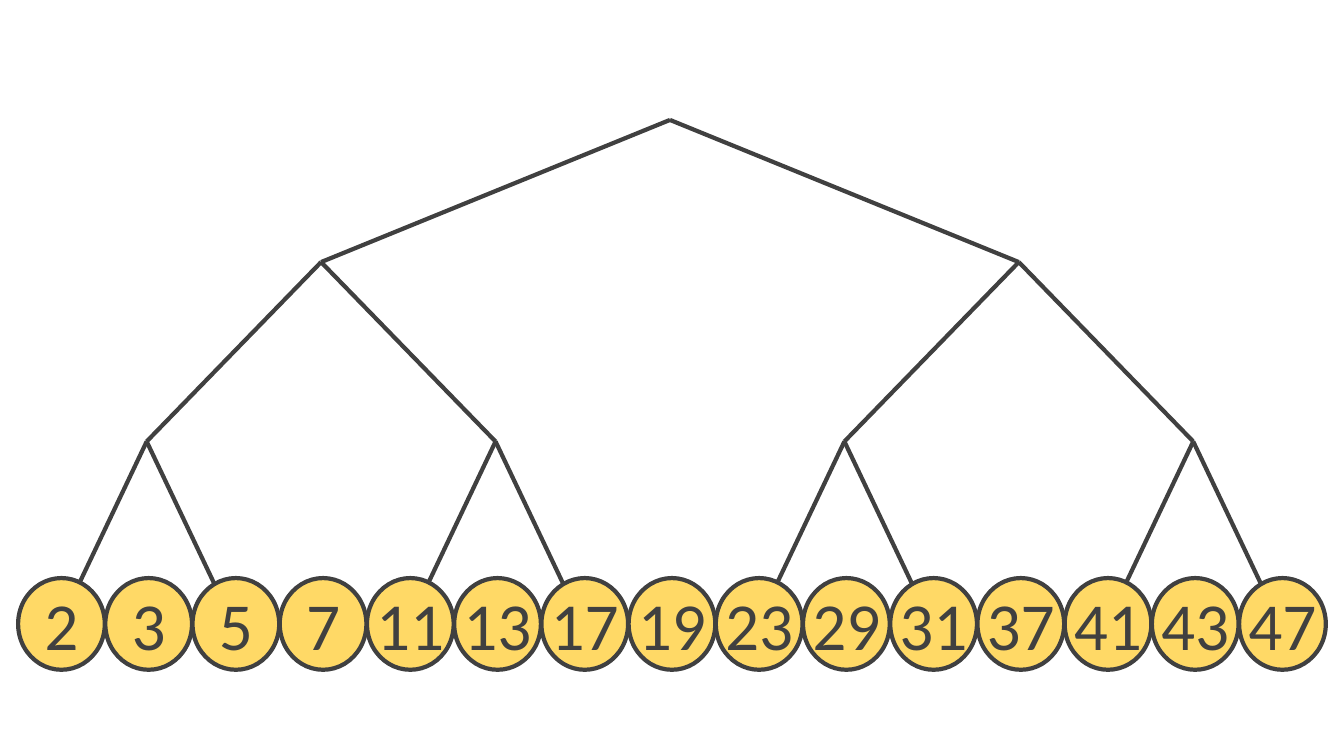
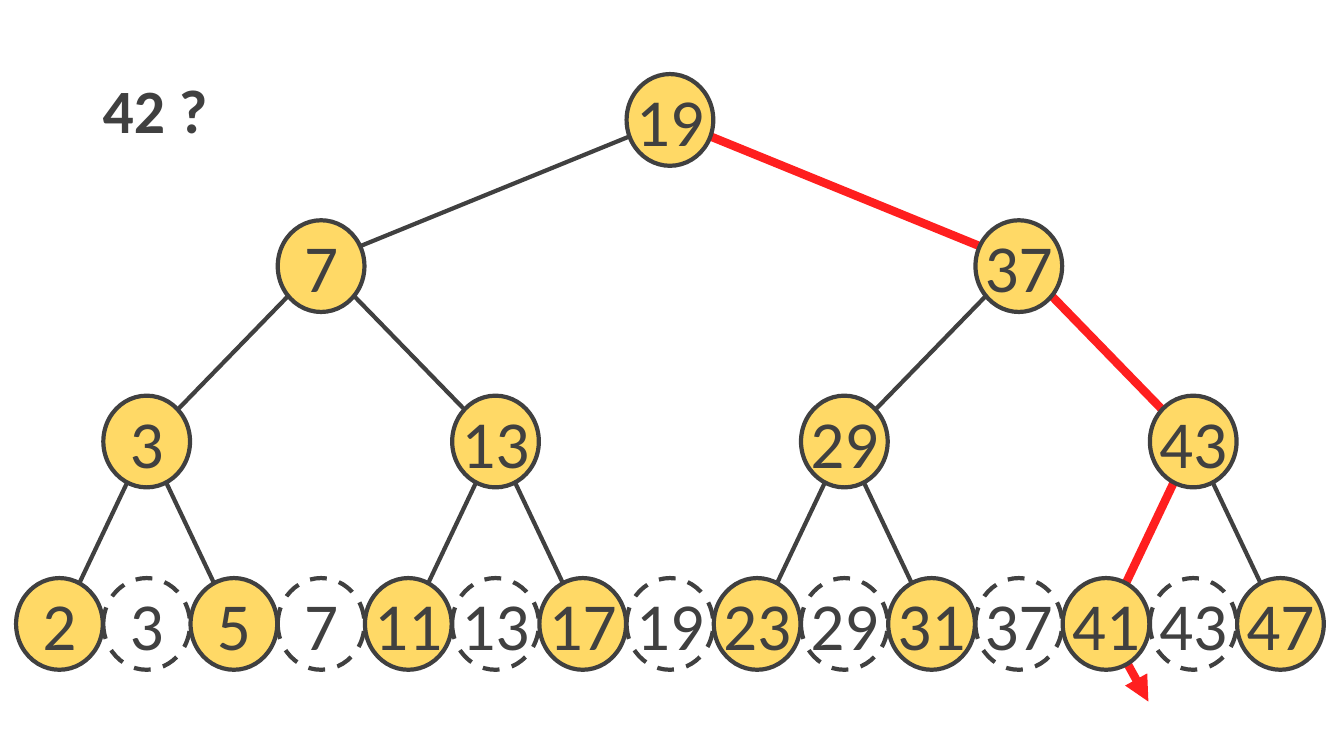
import pptx
import pptx.util
import pptx.dml.color
import pptx.enum.dml
import pptx.enum.shapes
import pptx.enum.text
import lxml.etree

Inches = pptx.util.Inches
Pt = pptx.util.Pt
RGB = pptx.dml.color.RGBColor.from_string
ALIGN = pptx.enum.text.PP_ALIGN
ANCHOR = pptx.enum.text.MSO_ANCHOR

PRIMES = [2, 3, 5, 7, 11, 13, 17, 19, 23, 29, 31, 37, 41, 43, 47]
QUESTION = "42 ?"
SEARCH_PATH = [19, 37, 43, 41]
SEARCH_EXIT = (11.39, 6.96)

THEME = {
    "font": "Calibri", "ink": "404040", "node": "FFD966", "path": "FF1F1F",
    "node_size": 48, "title_size": 44, "line": 3, "path_line": 6,
}
NODE_W, NODE_H = 0.86, 0.91
FIRST_X, STEP_X = 0.59, 0.865
ARRAY_SHIFT = 0.02
NODE_Y = [6.19, 4.38, 2.64, 1.19]
JOINT_Y = [6.2, 4.38, 2.6, 1.19]


def level(i):
    n = i + 1
    return (n & -n).bit_length() - 1


def center_x(i):
    return FIRST_X + STEP_X * i


def joint(i):
    return center_x(i), JOINT_Y[level(i)]


def apply(obj, formats):
    for name, value in formats.items():
        setattr(obj, name, value)


def add_text(tf, text, size, frame, bold=False, align=ALIGN.LEFT, spacing=1.0):
    apply(tf, frame)
    p = tf.paragraphs[0]
    apply(p, {"alignment": align, "line_spacing": spacing})
    r = p.add_run()
    r.text = text
    apply(r.font, {"name": THEME["font"], "size": Pt(size), "bold": bold})
    r.font.color.rgb = RGB(THEME["ink"])


def add_line(s, start, end, color=THEME["ink"], width=THEME["line"], arrow=False):
    points = [Inches(v) for v in (*start, *end)]
    ln = s.shapes.add_connector(pptx.enum.shapes.MSO_CONNECTOR.STRAIGHT, *points)
    ln.line.color.rgb = RGB(color)
    ln.line.width = Pt(width)
    ns = "{http://schemas.openxmlformats.org/drawingml/2006/main}"
    if arrow:
        lxml.etree.SubElement(ln.line._get_or_add_ln(), ns + "tailEnd", type="triangle")
    lxml.etree.SubElement(ln._element.spPr, ns + "effectLst")


def add_node(s, value, x, y, dashed=False):
    sp = s.shapes.add_shape(
        pptx.enum.shapes.MSO_SHAPE.OVAL, Inches(x - NODE_W / 2),
        Inches(y - NODE_H / 2), Inches(NODE_W), Inches(NODE_H))
    sp.shadow.inherit = False
    sp.line.color.rgb = RGB(THEME["ink"])
    sp.line.width = Pt(THEME["line"])
    if dashed:
        sp.fill.background()
        sp.line.dash_style = pptx.enum.dml.MSO_LINE.DASH
    else:
        sp.fill.solid()
        sp.fill.fore_color.rgb = RGB(THEME["node"])
    frame = {"word_wrap": False, "vertical_anchor": ANCHOR.MIDDLE, "margin_left": 0,
             "margin_right": 0, "margin_top": 0, "margin_bottom": 0}
    add_text(sp.text_frame, str(value), THEME["node_size"], frame, align=ALIGN.CENTER)


def add_edges(s):
    for i in range(len(PRIMES)):
        if level(i):
            reach = 2 ** (level(i) - 1)
            for child in (i - reach, i + reach):
                add_line(s, joint(child), joint(i))


def add_search(s):
    stops = [joint(PRIMES.index(v)) for v in SEARCH_PATH] + [SEARCH_EXIT]
    for start, end in zip(stops, stops[1:]):
        add_line(s, start, end, THEME["path"], THEME["path_line"], end == SEARCH_EXIT)


def add_title(s, text):
    tb = s.shapes.add_textbox(Inches(0.92), Inches(0.4), Inches(11.5), Inches(1.45))
    frame = {"word_wrap": True, "vertical_anchor": ANCHOR.MIDDLE}
    add_text(tb.text_frame, text, THEME["title_size"], frame, bold=True, spacing=0.9)


def build_array_slide(s):
    add_edges(s)
    for i, value in enumerate(PRIMES):
        add_node(s, value, center_x(i) + ARRAY_SHIFT, NODE_Y[0])


def build_search_slide(s):
    add_edges(s)
    add_search(s)
    for i, value in enumerate(PRIMES):
        add_node(s, value, center_x(i), NODE_Y[level(i)])
    for i, value in enumerate(PRIMES):
        if level(i):
            add_node(s, value, center_x(i), NODE_Y[0], dashed=True)
    add_title(s, QUESTION)


def main():
    prs = pptx.Presentation()
    apply(prs, {"slide_width": Inches(13.33), "slide_height": Inches(7.5)})
    for build in (build_array_slide, build_search_slide):
        build(prs.slides.add_slide(prs.slide_layouts[6]))
    prs.save("out.pptx")


if __name__ == "__main__":
    main()
